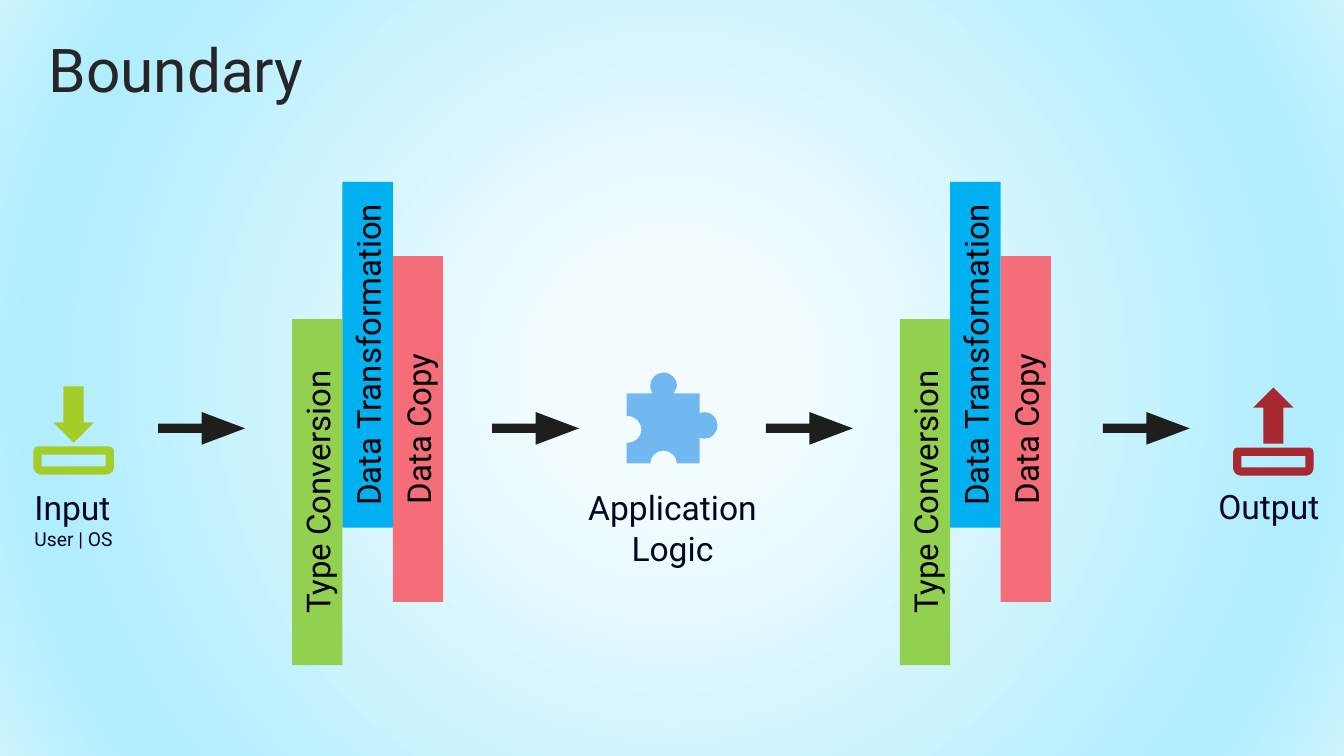
from dataclasses import dataclass

from lxml import etree
from pptx import Presentation
from pptx.dml.color import RGBColor
from pptx.enum.shapes import MSO_SHAPE as Shape
from pptx.enum.text import MSO_ANCHOR as Anchor, MSO_AUTO_SIZE as AutoSize, PP_ALIGN as Align
from pptx.util import Inches, Pt


@dataclass(frozen=True)
class Theme:
    font: str = "Roboto"
    title: str = "262626"
    caption: str = "000624"
    bar_text: str = "000000"
    green: str = "92D050"
    blue: str = "00B0F0"
    red: str = "F46D78"
    input: str = "A4CD27"
    output: str = "A82930"
    puzzle: str = "71B8F0"
    arrow: str = "1E1E1C"
    title_size: float = 44
    caption_size: float = 24.5
    note_size: float = 14
    bar_size: float = 24
    tray_line: float = 6
    glow: tuple = ((16, "F2FCFF"), (84, "AFEDFF"), (100, "CDF4FF"))


THEME = Theme()
DRAWING = "http://schemas.openxmlformats.org/drawingml/2006/main"

# Content: lengths in inches
SIZE = (13.6, 7.65)
TITLE = ("Boundary", (0.39, 0.28, 3.31, 0.87))
CAPTIONS = [  # lines with sizes, box, alignment, side margin, wrap
    ([("Input", THEME.caption_size), ("User | OS", THEME.note_size)],
     (0.25, 4.88, 0.99, 0.75), Align.LEFT, 0.1, False),
    ([("Output", THEME.caption_size)], (12.23, 4.87, 1.31, 0.52), Align.LEFT, 0.1, False),
    ([("Application Logic", THEME.caption_size)],
     (5.4, 4.88, 2.81, 0.51), Align.CENTER, 0.3, True),
]
BARS = [  # text, colour, column, vertical centre
    ("Data Transformation", THEME.blue, 1, 3.59),
    ("Data Copy", THEME.red, 2, 4.34),
    ("Type Conversion", THEME.green, 0, 4.98),
]
BAR_LENGTH, BAR_WIDTH = 3.5, 0.51
BOUNDARY_CENTERS = (9.36, 3.21)  # centre of the first bar on each side
ARROW_LEFTS = (1.6, 4.98, 7.75, 11.16)
ARROW_TOP, ARROW_SIZE, ARROW_ADJUST = 4.17, (0.88, 0.33), (0.283, 1.329)
TRAYS = [(0.38, 3.91, THEME.input, 0), (12.52, 3.92, THEME.output, 180)]
PUZZLE = [  # one point is a corner, three points are a curve
    [(6.71, 3.77)], [(6.79, 3.77), (6.85, 3.83), (6.85, 3.9)],
    [(6.85, 3.92), (6.84, 3.94), (6.83, 3.95)], [(6.82, 3.98)], [(7.08, 3.98)],
    [(7.08, 4.18)], [(7.13, 4.17)], [(7.2, 4.17), (7.26, 4.23), (7.26, 4.3)],
    [(7.26, 4.38), (7.2, 4.44), (7.13, 4.44)], [(7.08, 4.43)], [(7.08, 4.69)],
    [(6.85, 4.69)], [(6.85, 4.62), (6.79, 4.56), (6.71, 4.56)],
    [(6.64, 4.56), (6.58, 4.62), (6.58, 4.69)], [(6.34, 4.69)], [(6.34, 4.48)],
    [(6.35, 4.48)], [(6.43, 4.48), (6.49, 4.42), (6.49, 4.35)],
    [(6.49, 4.27), (6.43, 4.21), (6.35, 4.21)], [(6.34, 4.21)], [(6.34, 3.98)],
    [(6.6, 3.98)], [(6.59, 3.95)], [(6.58, 3.94), (6.58, 3.92), (6.58, 3.9)],
    [(6.58, 3.83), (6.64, 3.77), (6.71, 3.77)],
]


def place(box):
    return [Inches(length) for length in box]


def write(shape, lines, color, align, margin=0.1, **frame_format):
    """Fill a shape with paragraphs of (text, size)."""
    frame = shape.text_frame
    settings = {"auto_size": AutoSize.NONE, "word_wrap": True, "vertical_anchor": Anchor.TOP,
                "margin_left": Inches(margin), "margin_right": Inches(margin)}
    for name, value in {**settings, **frame_format}.items():
        setattr(frame, name, value)
    for index, (text, size) in enumerate(lines):
        paragraph = frame.add_paragraph() if index else frame.paragraphs[0]
        paragraph.alignment = align
        run = paragraph.add_run()
        run.text = text
        run.font.name, run.font.size = THEME.font, Pt(size)
        run.font.color.rgb = RGBColor.from_string(color)


def paint(shape, color):
    shape.shadow.inherit = False
    shape.fill.solid()
    shape.fill.fore_color.rgb = RGBColor.from_string(color)
    shape.line.fill.background()
    return shape


def add_solid(slide, kind, box, color, rotation=0):
    shape = paint(slide.shapes.add_shape(kind, *place(box)), color)
    shape.rotation = rotation
    return shape


def add_background(slide):
    slide.background.fill.solid()
    solid = slide.background._cSld.find(f".//{{{DRAWING}}}solidFill")
    stops = "".join(f'<a:gs pos="{position * 1000}"><a:srgbClr val="{color}"/></a:gs>'
                    for position, color in THEME.glow)
    gradient = etree.fromstring(
        f'<a:gradFill xmlns:a="{DRAWING}" rotWithShape="1"><a:gsLst>{stops}</a:gsLst>'
        '<a:path path="circle"><a:fillToRect l="50000" t="50000" r="50000" b="50000"/>'
        '</a:path></a:gradFill>')
    solid.getparent().replace(solid, gradient)


def add_boundary(slide, first_center):
    for text, color, column, middle in BARS:
        center = first_center + column * BAR_WIDTH
        box = (center - BAR_LENGTH / 2, middle - BAR_WIDTH / 2, BAR_LENGTH, BAR_WIDTH)
        bar = add_solid(slide, Shape.RECTANGLE, box, color, 270)
        write(bar, [(text, THEME.bar_size)], THEME.bar_text, Align.CENTER,
              vertical_anchor=Anchor.MIDDLE)


def add_tray(slide, left, top, color, rotation):
    add_solid(slide, Shape.DOWN_ARROW, (left + 0.16, top, 0.41, 0.57), color, rotation)
    tray = add_solid(slide, Shape.ROUND_2_SAME_RECTANGLE,
                     (left, top + 0.65, 0.73, 0.2), color, 180)
    tray.fill.background()
    tray.line.color.rgb = RGBColor.from_string(color)
    tray.line.width = Pt(THEME.tray_line)


def add_puzzle(slide):
    start, *ends = [place(part[-1]) for part in PUZZLE]
    builder = slide.shapes.build_freeform(*start)
    builder.add_line_segments(ends, close=True)
    puzzle = paint(builder.convert_to_shape(), THEME.puzzle)

    # Bend the segments that are curves
    segments = list(puzzle._element.iter(f"{{{DRAWING}}}lnTo"))
    for segment, part in zip(segments, PUZZLE[1:]):
        if len(part) == 3:
            segment_curve = etree.SubElement(segment.getparent(), f"{{{DRAWING}}}cubicBezTo")
            for x, y in map(place, part):
                etree.SubElement(segment_curve, f"{{{DRAWING}}}pt",
                                 x=str(x - puzzle.left), y=str(y - puzzle.top))
            segment.getparent().replace(segment, segment_curve)


def main():
    presentation = Presentation()
    presentation.slide_width, presentation.slide_height = place(SIZE)
    slide = presentation.slides.add_slide(presentation.slide_layouts[5])
    add_background(slide)

    # Title
    text, box = TITLE
    title = slide.shapes.title
    title.left, title.top, title.width, title.height = place(box)
    write(title, [(text, THEME.title_size)], THEME.title, Align.LEFT)

    # Captions
    for lines, box, align, margin, wrap in CAPTIONS:
        caption = slide.shapes.add_textbox(*place(box))
        write(caption, lines, THEME.caption, align, margin, word_wrap=wrap)

    # Boundaries on both sides of the logic
    for center in BOUNDARY_CENTERS:
        add_boundary(slide, center)

    # Icons
    for tray in TRAYS:
        add_tray(slide, *tray)
    add_puzzle(slide)

    # Flow arrows
    for left in ARROW_LEFTS:
        arrow = add_solid(slide, Shape.RIGHT_ARROW, (left, ARROW_TOP, *ARROW_SIZE), THEME.arrow)
        for index, value in enumerate(ARROW_ADJUST):
            arrow.adjustments[index] = value

    presentation.save("out.pptx")


if __name__ == "__main__":
    main()
